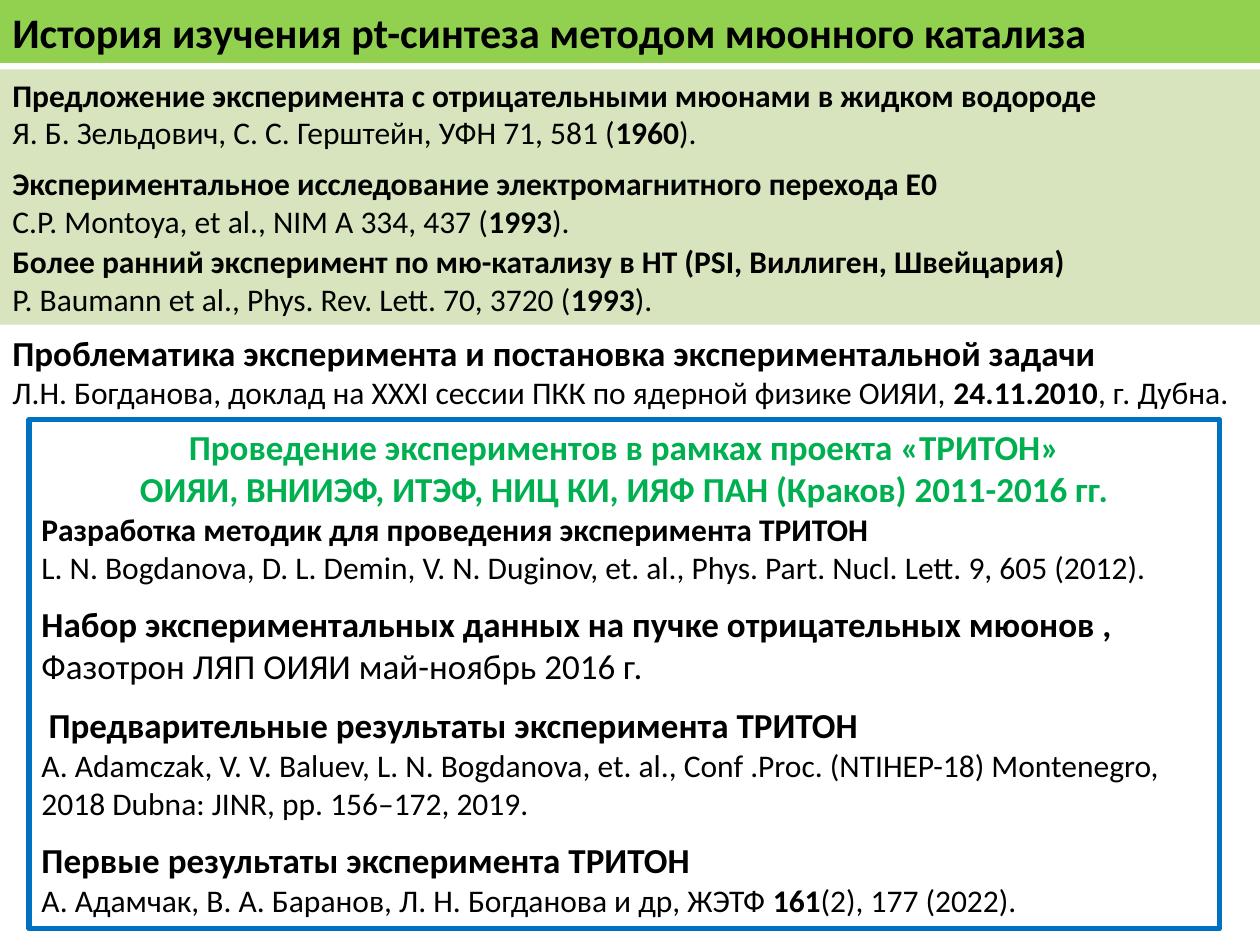
from dataclasses import dataclass

from pptx import Presentation
from pptx.dml.color import RGBColor
from pptx.enum.shapes import MSO_SHAPE
from pptx.enum.text import MSO_ANCHOR, MSO_AUTO_SIZE, PP_ALIGN
from pptx.util import Pt

RECT = MSO_SHAPE.RECTANGLE
TOP = MSO_ANCHOR.TOP
GROW = MSO_AUTO_SIZE.SHAPE_TO_FIT_TEXT
LEFT, MID = PP_ALIGN.LEFT, PP_ALIGN.CENTER


@dataclass(frozen=True)
class Theme:
    font: str = "Calibri"
    title: int = 24
    head: int = 20
    body: int = 18
    ink: str = "000000"
    lime: str = "92D050"
    pale: str = "D7E4BD"
    green: str = "00B050"
    blue: str = "0070C0"
    edge: float = 3
    gap: float = 9.8


T = Theme()
WIDE, HIGH = 720, 540


def para(*runs, size=T.body, color=T.ink, align=LEFT, gap=0):
    """Describe a paragraph; each run is (text, bold) or (text, bold, size)."""
    return dict(runs=runs, size=size, color=color, align=align, gap=gap)


def head(text, size=T.head, **more):
    return para((text, True), size=size, **more)


def cite(start, mark, end):
    """Reference line with its middle part in bold."""
    return para((start, False), (mark, True), (end, False))


TITLE = [head("История изучения pt-синтеза методом мюонного катализа", T.title)]

# Top and paragraphs of each pale band, from back to front
BANDS = [
    (39.6, [
        head("Предложение эксперимента с отрицательными мюонами в жидком водороде", T.body),
        cite("Я. Б. Зельдович, С. С. Герштейн, УФН 71, 581 (", "1960", ")."),
    ]),
    (134.6, [
        head("Более ранний эксперимент по мю-катализу в НТ (PSI, Виллиген, Швейцария)", T.body),
        cite("P. Baumann et al., Phys. Rev. Lett. 70, 3720 (", "1993", ")."),
    ]),
    (90, [
        head("Экспериментальное исследование электромагнитного перехода Е0", T.body),
        cite("C.P. Montoya, et al., NIM A 334, 437 (", "1993", ")."),
    ]),
]

TASK = [
    head("Проблематика эксперимента и постановка экспериментальной задачи"),
    cite("Л.Н. Богданова, доклад на XXXI сессии ПКК по ядерной физике ОИЯИ, ",
         "24.11.2010", ", г. Дубна."),
]

PROJECT = [
    head("Проведение экспериментов в рамках проекта «ТРИТОН»", color=T.green, align=MID),
    head("ОИЯИ, ВНИИЭФ, ИТЭФ, НИЦ КИ, ИЯФ ПАН (Краков) 2011-2016 гг.",
         color=T.green, align=MID),
    head("Разработка методик для проведения эксперимента ТРИТОН", T.body),
    para(("L. N. Bogdanova, D. L. Demin, V. N. Duginov, et. al., "
          "Phys. Part. Nucl. Lett. 9, 605 (2012).", False)),
    para(("Набор экспериментальных данных на пучке отрицательных мюонов , ", True),
         ("Фазотрон ЛЯП ОИЯИ май-ноябрь 2016 г.", False), size=T.head, gap=T.gap),
    para((" ", True, T.body), ("Предварительные результаты эксперимента ТРИТОН", True),
         size=T.head, gap=T.gap),
    para(("A. Adamczak, V. V. Baluev, L. N. Bogdanova, et. al., Conf .Proc. (NTIHEP-18) "
          "Montenegro, 2018 Dubna: JINR, pp. 156–172, 2019.", False)),
    head("Первые результаты эксперимента ТРИТОН", gap=T.gap),
    cite("А. Адамчак, В. А. Баранов, Л. Н. Богданова и др, ЖЭТФ ", "161", "(2), 177 (2022)."),
]


def write(shape, paras):
    frame = shape.text_frame
    frame.word_wrap = True
    frame.auto_size = GROW
    frame.vertical_anchor = TOP
    for i, item in enumerate(paras):
        p = frame.add_paragraph() if i else frame.paragraphs[0]
        p.alignment = item["align"]
        p.space_before = Pt(item["gap"])
        for text, bold, *size in item["runs"]:
            run = p.add_run()
            run.text = text
            font = run.font
            font.name = T.font
            font.size = Pt(size[0] if size else item["size"])
            font.bold = bold
            font.color.rgb = RGBColor.from_string(item["color"])


def block(slide, box, paras, fill=None, line=None):
    shape = slide.shapes.add_shape(RECT, *map(Pt, box))
    shape.shadow.inherit = False
    if fill:
        shape.fill.solid()
        shape.fill.fore_color.rgb = RGBColor.from_string(fill)
    else:
        shape.fill.background()
    if line:
        shape.line.color.rgb = RGBColor.from_string(line)
        shape.line.width = Pt(T.edge)
    else:
        shape.line.fill.background()
    write(shape, paras)


def main():
    deck = Presentation()
    deck.slide_width, deck.slide_height = Pt(WIDE), Pt(HIGH)
    slide = deck.slides.add_slide(deck.slide_layouts[6])
    for top, paras in BANDS:
        block(slide, (0, top, WIDE, 51), paras, fill=T.pale)
    block(slide, (0, 0, WIDE, 36), TITLE, fill=T.lime)
    block(slide, (16.6, 239.8, 680.4, 290.9), PROJECT, line=T.blue)
    task = slide.shapes.add_textbox(*map(Pt, (0, 185.8, WIDE, 53.3)))
    write(task, TASK)
    deck.save("out.pptx")


if __name__ == "__main__":
    main()
